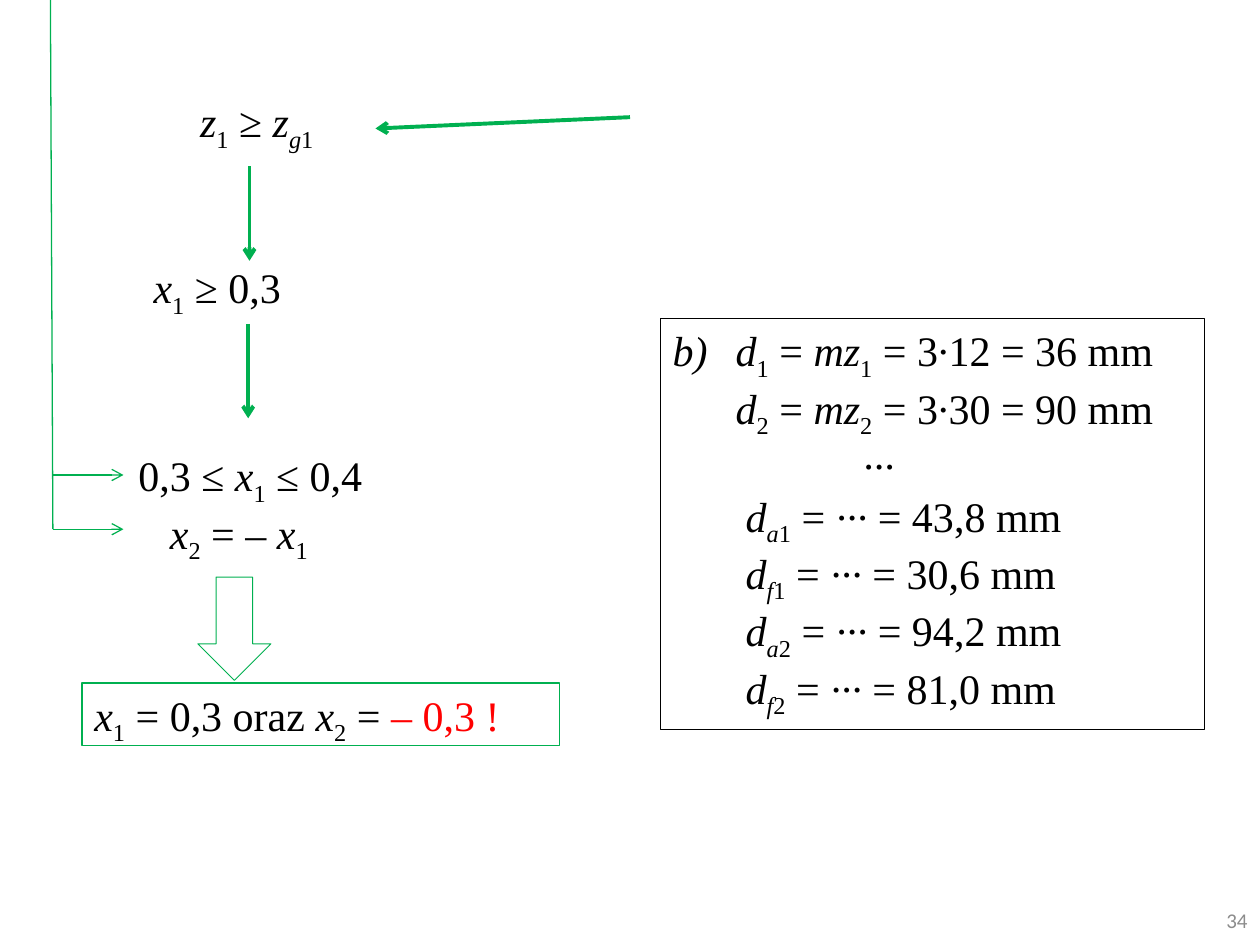
from lxml.etree import SubElement
from pptx import Presentation
from pptx.dml.color import RGBColor
from pptx.enum.shapes import MSO_CONNECTOR, MSO_SHAPE
from pptx.enum.text import MSO_ANCHOR, PP_ALIGN
from pptx.oxml.ns import qn
from pptx.util import Inches, Pt

GREEN = RGBColor(0x00, 0xB0, 0x50)
BLACK = RGBColor(0x00, 0x00, 0x00)
RED = RGBColor(0xFF, 0x00, 0x00)
GRAY = RGBColor(0x8C, 0x8C, 0x8C)
SERIF = "Times New Roman"

# Run styles: i = italic, s = subscript, r = red
X1 = [("x", "i"), ("1", "s")]
X2 = [("x", "i"), ("2", "s")]


def pitch_diameter(index, result):
    return [("d", "i"), (index, "s"), (" = ", ""), ("mz", "i"), (index, "s"),
            (f" = {result} mm", "")]


def circle_diameter(circle, index, result):
    return [("d", "i"), (circle, "is"), (index, "s"), (" = ", ""),
            ("∙∙∙ ", "i"), (f"= {result} mm", "")]


# Each text: left, top, width, height, border (colour, points), paragraphs (indent, runs)
CONDITIONS = [
    (1.43, 0.71, 1.22, 0.5, None,
     [(0.06, [("z", "i"), ("1", "s"), (" ≥ ", ""), ("z", "i"), ("g", "is"), ("1", "s")])]),
    (1.12, 2.03, 1.45, 0.5, None, [(0, X1 + [(" ≥ 0,3", "")])]),
    (1, 3.52, 2.1, 0.91, None,
     [(0, [("0,3 ≤ ", "")] + X1 + [(" ≤ 0,4", "")]),
      (0.25, X2 + [(" = ‒ ", "")] + X1)]),
    (0.65, 5.42, 3.79, 0.5, (GREEN, 0.75),
     [(0, X1 + [(" = 0,3 oraz ", "")] + X2 + [(" = ", ""), ("‒ 0,3 !", "r")])]),
]
DIAMETERS = (5.24, 2.53, 4.32, 3.26, (BLACK, 0.5), [
    (0.5, pitch_diameter("1", "3∙12 = 36")),
    (0.5, pitch_diameter("2", "3∙30 = 90")),
    (1.51, [("∙∙∙", "i")]),
    (0.58, circle_diameter("a", "1", "43,8")),
    (0.58, circle_diameter("f", "1", "30,6")),
    (0.58, circle_diameter("a", "2", "94,2")),
    (0.58, circle_diameter("f", "2", "81,0")),
])
# Each line: start x, start y, end x, end y, points, has an arrowhead
LINES = [
    (5, 0.93, 2.98, 1.02, 2.25, True),
    (1.98, 1.32, 1.98, 2.07, 2.25, True),
    (1.97, 2.57, 1.97, 3.32, 2.25, True),
    (0.4, 0, 0.42, 4.2, 0.75, False),
    (0.42, 3.77, 0.98, 3.77, 0.75, True),
    (0.42, 4.2, 0.98, 4.2, 0.75, True),
]
RESULT_ARROW = (1.57, 4.58, 0.58, 0.82)
NUMBER_BOX = (9.25, 7.1, 0.75, 0.4)


def add_outline(slide, kind, bounds, color, points):
    shape = slide.shapes.add_shape(kind, *map(Inches, bounds))
    shape.shadow.inherit = False
    shape.fill.background()
    shape.line.color.rgb = color
    shape.line.width = Pt(points)
    return shape


def add_run(paragraph, text, style):
    run = paragraph.add_run()
    run.text = text
    font = run.font
    font.name, font.size = SERIF, Pt(24)
    font.italic = "i" in style
    font.color.rgb = RED if "r" in style else BLACK
    if "s" in style:
        font._element.set("baseline", "-25000")


def add_formulas(slide, left, top, width, height, border, paragraphs):
    bounds = (left, top, width, height)
    if border:
        shape = add_outline(slide, MSO_SHAPE.RECTANGLE, bounds, *border)
    else:
        shape = slide.shapes.add_textbox(*map(Inches, bounds))
    frame = shape.text_frame
    frame.word_wrap = True
    frame.vertical_anchor = MSO_ANCHOR.TOP
    for number, (indent, runs) in enumerate(paragraphs):
        paragraph = frame.paragraphs[0] if number == 0 else frame.add_paragraph()
        paragraph.alignment = PP_ALIGN.LEFT
        paragraph._p.get_or_add_pPr().set("marL", str(Inches(indent)))
        for text, style in runs:
            add_run(paragraph, text, style)
    return frame


def number_as_b(paragraph):
    """Give the paragraph a hanging automatic number that starts at b)."""
    properties = paragraph._p.get_or_add_pPr()
    properties.set("indent", str(-Inches(0.5)))
    SubElement(properties, qn("a:buFont"), typeface="+mj-lt")
    SubElement(properties, qn("a:buAutoNum"), type="alphaLcParenR", startAt="2")


def add_line(slide, x1, y1, x2, y2, points, arrow):
    connector = slide.shapes.add_connector(
        MSO_CONNECTOR.STRAIGHT, *map(Inches, (x1, y1, x2, y2)))
    connector.line.color.rgb = GREEN
    connector.line.width = Pt(points)
    if arrow:
        SubElement(connector.line._get_or_add_ln(), qn("a:tailEnd"), type="arrow")
    SubElement(connector._element.spPr, qn("a:effectLst"))


def add_slide_number(slide, text):
    frame = slide.shapes.add_textbox(*map(Inches, NUMBER_BOX)).text_frame
    frame.word_wrap = True
    frame.vertical_anchor = MSO_ANCHOR.MIDDLE
    paragraph = frame.paragraphs[0]
    paragraph.alignment = PP_ALIGN.RIGHT
    run = paragraph.add_run()
    run.text = text
    run.font.name, run.font.size = "Calibri", Pt(12)
    run.font.color.rgb = GRAY


def main():
    presentation = Presentation()
    presentation.slide_width, presentation.slide_height = Inches(10), Inches(7.5)
    slide = presentation.slides.add_slide(presentation.slide_layouts[6])
    add_slide_number(slide, "34")
    for condition in CONDITIONS:
        add_formulas(slide, *condition)
    for line in LINES:
        add_line(slide, *line)
    add_outline(slide, MSO_SHAPE.DOWN_ARROW, RESULT_ARROW, GREEN, 0.5)
    diameters = add_formulas(slide, *DIAMETERS)
    number_as_b(diameters.paragraphs[0])
    presentation.save("out.pptx")


if __name__ == "__main__":
    main()
